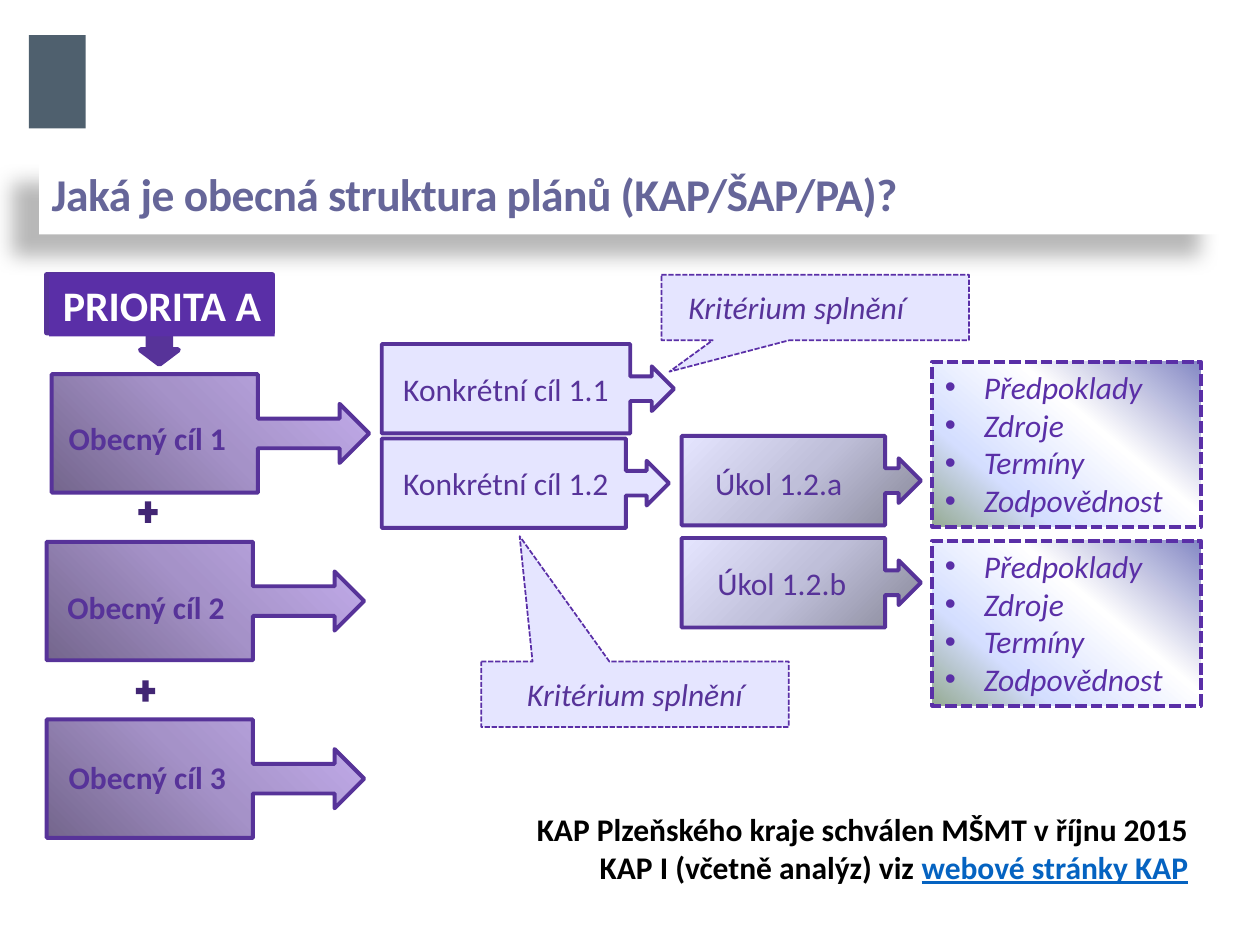
from lxml import etree
from pptx import Presentation
from pptx.dml.color import RGBColor
from pptx.enum.dml import MSO_LINE
from pptx.enum.shapes import MSO_SHAPE
from pptx.enum.text import MSO_ANCHOR, MSO_AUTO_SIZE, PP_ALIGN
from pptx.oxml.ns import qn
from pptx.util import Inches, Pt

RECT, PLUS = MSO_SHAPE.RECTANGLE, MSO_SHAPE.MATH_PLUS
DOWN, RIGHT = MSO_SHAPE.DOWN_ARROW_CALLOUT, MSO_SHAPE.RIGHT_ARROW_CALLOUT
BUBBLE = MSO_SHAPE.RECTANGULAR_CALLOUT
LEFT_ALIGN, CENTER, RIGHT_ALIGN = PP_ALIGN.LEFT, PP_ALIGN.CENTER, PP_ALIGN.RIGHT
TOP, MIDDLE = MSO_ANCHOR.TOP, MSO_ANCHOR.MIDDLE
DASH = MSO_LINE.SQUARE_DOT

COLORS = {
    "logo": "4F606E", "title": "666699", "white": "FFFFFF", "black": "000000",
    "purple": "573399", "violet": "5A2FA7", "plus": "422674",
    "lilac": "E5E5FF", "link": "0563C1",
}
GOAL_STOPS = [(0, "74668D"), (50, "A592C8"), (100, "C4ADED")]
TASK_STOPS = [(0, "878798"), (50, "BFBFD9"), (100, "E5E5FF")]
NEED_STOPS = [(0, "8488C4"), (39, "FFFFFF"), (74, "D4DEFF"), (100, "96AB94")]

TITLE = "Jaká je obecná struktura plánů (KAP/ŠAP/PA)?"
PRIORITY = "PRIORITA A"
# text, frame left, frame top, label left, label top
GENERAL_GOALS = [
    ("Obecný cíl 1", 1.2, 2.18, 0.44, 3.28),
    ("Obecný cíl 2", 1.16, 3.51, 0.43, 4.62),
    ("Obecný cíl 3", 1.16, 4.92, 0.44, 5.97),
]
PLUSES = [(1.07, 3.95), (1.05, 5.37)]
# text, arrow top, label left, label top, label width
TASKS = [("Úkol 1.2.a", 3.46, 5.57, 3.63, 1.22),
         ("Úkol 1.2.b", 4.27, 5.59, 4.43, 1.23)]
# left, top, pointer tip, label left
CRITERION = "Kritérium splnění"
CRITERIA = [(5.25, 2.18, (-0.474, 0.98), 5.34),
            (3.82, 5.25, (-0.375, -2.412), 4.06)]
NEEDS = ["Předpoklady", "Zdroje", "Termíny", "Zodpovědnost"]
NEED_TOPS = [2.87, 4.29]
NOTES = ["KAP Plzeňského kraje schválen MŠMT v říjnu 2015",
         "KAP I (včetně analýz) viz "]
LINK = "webové stránky KAP"
ARROW_ADJ = (0.276, 0.25, 0.25, 0.85)

prs = Presentation()
prs.slide_width, prs.slide_height = Inches(10), Inches(7.5)
slide = prs.slides.add_slide(prs.slide_layouts[5])


def rgb(name):
    return RGBColor.from_string(COLORS[name])


def add_figure(kind, box, fill=None, line=None, width=2.25, dash=None, adj=()):
    figure = slide.shapes.add_shape(kind, *map(Inches, box))
    figure.shadow.inherit = False
    for i, value in enumerate(adj):
        figure.adjustments[i] = value
    if fill:
        figure.fill.solid()
        figure.fill.fore_color.rgb = rgb(fill)
    if line:
        figure.line.color.rgb = rgb(line)
        figure.line.width = Pt(width)
        if dash:
            figure.line.dash_style = dash
    else:
        figure.line.fill.background()
    return figure


def set_gradient(figure, stops, angle=None):
    """Linear at a clockwise angle, or radial from the lower left corner."""
    figure.fill.gradient()
    gradient = figure._element.spPr.find(qn("a:gradFill"))
    gradient.clear()
    gradient.set("rotWithShape", "0" if angle is None else "1")
    stop_list = etree.SubElement(gradient, qn("a:gsLst"))
    for position, color in stops:
        stop = etree.SubElement(stop_list, qn("a:gs"), pos=str(position * 1000))
        etree.SubElement(stop, qn("a:srgbClr"), val=color)
    if angle is None:
        radial = etree.SubElement(gradient, qn("a:path"), path="circle")
        etree.SubElement(radial, qn("a:fillToRect"), t="100000", r="100000")
    else:
        etree.SubElement(gradient, qn("a:lin"), ang=str(angle * 60000), scaled="0")


def write(holder, lines, color, size=18, bold=False, italic=False,
          align=CENTER, anchor=TOP, wrap=False):
    frame = holder.text_frame
    frame.word_wrap = wrap
    frame.auto_size = MSO_AUTO_SIZE.NONE
    frame.vertical_anchor = anchor
    frame.text = "\n".join(lines)
    for paragraph in frame.paragraphs:
        paragraph.alignment = align
        font = paragraph.font
        font.name, font.size = "Calibri", Pt(size)
        font.bold, font.italic = bold, italic
        font.color.rgb = rgb(color)
    return frame.paragraphs


def add_label(text, left, top, width, **style):
    label = slide.shapes.add_textbox(*map(Inches, (left, top, width, 0.4)))
    write(label, [text], "purple", **style)


def add_title():
    title = slide.shapes.title
    title.left, title.top, title.width, title.height = map(
        Inches, (0.31, 1.27, 9.41, 0.59))
    title.fill.solid()
    title.fill.fore_color.rgb = rgb("white")
    title.shadow.inherit = False
    effects = title._element.spPr.find(qn("a:effectLst"))
    shadow = etree.SubElement(
        effects, qn("a:outerShdw"), blurRad=str(Pt(11.8)), dist=str(Pt(19.7)),
        dir=str(141 * 60000), algn="tl", rotWithShape="0")
    shade = etree.SubElement(shadow, qn("a:srgbClr"), val=COLORS["black"])
    etree.SubElement(shade, qn("a:alpha"), val="28000")
    line = write(title, [TITLE], "title", 26, bold=True, align=LEFT_ALIGN, wrap=True)[0]
    line.space_before = Pt(6)
    line.runs[0]._r.get_or_add_rPr().set("spc", "-30")


def add_needs(top):
    needs = add_figure(RECT, (7.4, top, 2.13, 1.31), line="violet", dash=DASH)
    set_gradient(needs, NEED_STOPS, 130)
    for paragraph in write(needs, NEEDS, "violet", italic=True,
                           align=LEFT_ALIGN, wrap=True):
        props = paragraph._p.get_or_add_pPr()
        props.set("marL", str(Inches(0.31)))
        props.set("indent", str(-Inches(0.31)))
        bullet_font = etree.Element(qn("a:buFont"), typeface="Arial")
        bullet = etree.Element(qn("a:buChar"), char="•")
        props.insert(0, bullet_font)
        bullet_font.addnext(bullet)


add_title()
add_figure(RECT, (0.23, 0.28, 0.45, 0.74), "logo")

add_figure(DOWN, (0.37, 2.18, 1.79, 0.71), "purple", "purple", 3,
           adj=(0.25, 0.211, 0.159, 0.65))
priority = add_figure(RECT, (0.39, 2.17, 1.79, 0.5), "violet")
write(priority, [PRIORITY], "white", 24, bold=True)

for text, left, top, label_left, label_top in GENERAL_GOALS:
    goal = add_figure(DOWN, (left, top, 0.94, 2.52), line="purple")
    goal.rotation = 270
    set_gradient(goal, GOAL_STOPS)
    add_label(text, label_left, label_top, 1.46, bold=True)
for left, top in PLUSES:
    add_figure(PLUS, (left, top, 0.21, 0.23), "plus")

first_goal = add_figure(RIGHT, (3.03, 2.73, 2.32, 0.71), "lilac", "purple", adj=ARROW_ADJ)
write(first_goal, ["Konkrétní cíl 1.1"], "purple", anchor=MIDDLE)
add_figure(RIGHT, (3.03, 3.48, 2.28, 0.71), "lilac", "purple", adj=ARROW_ADJ)
add_label("Konkrétní cíl 1.2", 3.09, 3.63, 1.85)

for text, top, label_left, label_top, label_width in TASKS:
    task = add_figure(RIGHT, (5.41, top, 1.9, 0.71), line="purple", adj=ARROW_ADJ)
    set_gradient(task, TASK_STOPS, 225)
    add_label(text, label_left, label_top, label_width)

for top in NEED_TOPS:
    add_needs(top)

for left, top, tip, label_left in CRITERIA:
    add_figure(BUBBLE, (left, top, 2.44, 0.52), "lilac", "violet", 1, DASH, tip)
    add_label(CRITERION, label_left, top + 0.06, 1.96, italic=True)

notes = slide.shapes.add_textbox(*map(Inches, (3.03, 6.38, 6.5, 0.71)))
last_note = write(notes, NOTES, "black", bold=True, align=RIGHT_ALIGN, wrap=True)[-1]
link = last_note.add_run()
link.text = LINK
link.font.underline = True
link.font.color.rgb = rgb("link")

prs.save("out.pptx")
